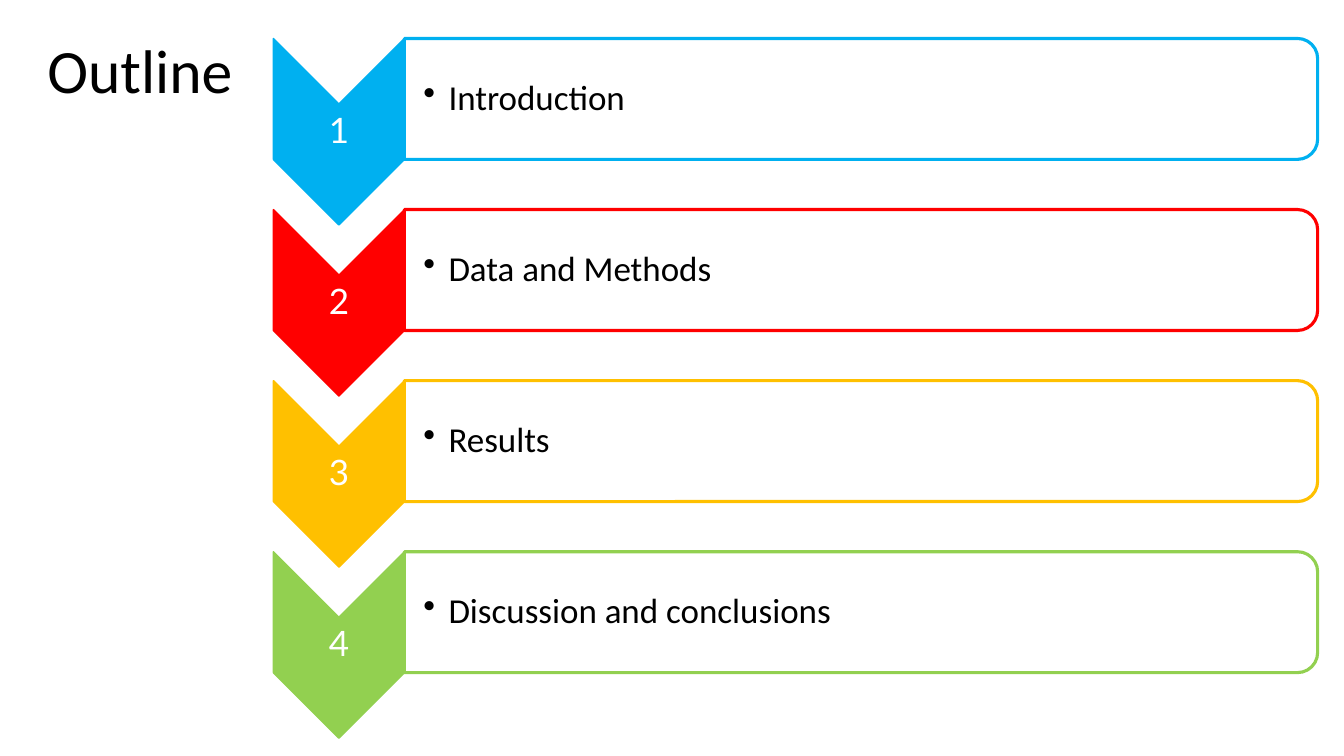
from pptx import Presentation
from pptx.dml.color import RGBColor
from pptx.enum.shapes import MSO_SHAPE as Shape
from pptx.enum.text import MSO_ANCHOR as Anchor, PP_ALIGN as Align
from pptx.oxml.ns import qn
from pptx.util import Pt
from lxml.etree import SubElement

# Content
TITLE = "Outline"
SECTIONS = [
    ("Introduction", "00B0F0"),
    ("Data and Methods", "FF0000"),
    ("Results", "FFC000"),
    ("Discussion and conclusions", "92D050"),
]

THEME = {
    "text": "000000", "paper": "FFFFFF", "paper_alpha": 90,
    "title_size": 44, "item_size": 25,
    "title_font": "Calibri", "item_font": "Calibri", "number_font": "Lato",
}

# Layout in points
ROW_TOP, ROW_PITCH = 27.5, 122.2
CHEVRON_LEFT, CHEVRON_WIDTH, CHEVRON_HEIGHT = 195.3, 93.6, 133.2
NUMBER_HEIGHT = 40.3
BAR_LEFT, BAR_WIDTH, BAR_HEIGHT = 288.9, 652.3, 86.4
ITEM_WIDTH, ITEM_HEIGHT = 648, 78.5


def write_text(box, text, *, size, font, color, align=Align.LEFT,
               insets=(1.5, 1.5, 1.5, 1.5), bullet=False):
    frame = box.text_frame
    frame.word_wrap = True
    frame.vertical_anchor = Anchor.MIDDLE
    (frame.margin_left, frame.margin_top,
     frame.margin_right, frame.margin_bottom) = map(Pt, insets)
    para = frame.paragraphs[0]
    para.alignment, para.line_spacing = align, 0.9
    span = para.add_run()
    span.text = text
    span.font.size, span.font.name = Pt(size), font
    span.font.color.rgb = RGBColor.from_string(color)
    if bullet:
        para.level = 1
        props = para._p.get_or_add_pPr()
        props.set("marL", str(Pt(18)))
        props.set("indent", str(-Pt(18)))
        SubElement(props, qn("a:buChar")).set("char", "•")


def add_turned(shapes, kind, left, top, width, height, fill, line, weight):
    """Add a shape turned by 90 degrees that covers the given area."""
    shift = (width - height) / 2
    shape = shapes.add_shape(kind, Pt(left + shift), Pt(top - shift),
                             Pt(height), Pt(width))
    shape.rotation = 90
    shape.shadow.inherit = False
    shape.fill.solid()
    shape.fill.fore_color.rgb = RGBColor.from_string(fill)
    shape.line.color.rgb = RGBColor.from_string(line)
    shape.line.width = Pt(weight)
    return shape


deck = Presentation()
deck.slide_width, deck.slide_height = Pt(960), Pt(540)
page = deck.slides.add_slide(deck.slide_layouts[5])

# Title
title = page.shapes.title
title.left, title.top, title.width, title.height = map(Pt, (26.6, 0, 828, 104.4))
write_text(title, TITLE, size=THEME["title_size"], font=THEME["title_font"],
           color=THEME["text"], insets=(7.2, 3.6, 7.2, 3.6))

# Numbered sections
outline = page.shapes.add_group_shape().shapes
for index, (section, color) in enumerate(SECTIONS):
    top = ROW_TOP + index * ROW_PITCH

    # Chevron with its number
    add_turned(outline, Shape.CHEVRON, CHEVRON_LEFT, top, CHEVRON_WIDTH,
               CHEVRON_HEIGHT, color, color, 1)
    number = outline.add_textbox(
        Pt(CHEVRON_LEFT), Pt(top + (CHEVRON_HEIGHT - NUMBER_HEIGHT) / 2),
        Pt(CHEVRON_WIDTH), Pt(NUMBER_HEIGHT))
    write_text(number, str(index + 1), size=THEME["item_size"],
               font=THEME["number_font"], color=THEME["paper"],
               align=Align.CENTER)

    # Bar with the section name
    bar = add_turned(outline, Shape.ROUND_2_SAME_RECTANGLE, BAR_LEFT, top,
                     BAR_WIDTH, BAR_HEIGHT, THEME["paper"], color, 2.25)
    paper = bar._element.spPr.find(qn("a:solidFill"))[0]
    SubElement(paper, qn("a:alpha")).set("val", str(THEME["paper_alpha"] * 1000))
    item = outline.add_textbox(
        Pt(BAR_LEFT), Pt(top + (BAR_HEIGHT - ITEM_HEIGHT) / 2),
        Pt(ITEM_WIDTH), Pt(ITEM_HEIGHT))
    write_text(item, section, size=THEME["item_size"], font=THEME["item_font"],
               color=THEME["text"], insets=(13.5, 1.5, 1.5, 1.5), bullet=True)

deck.save("out.pptx")
